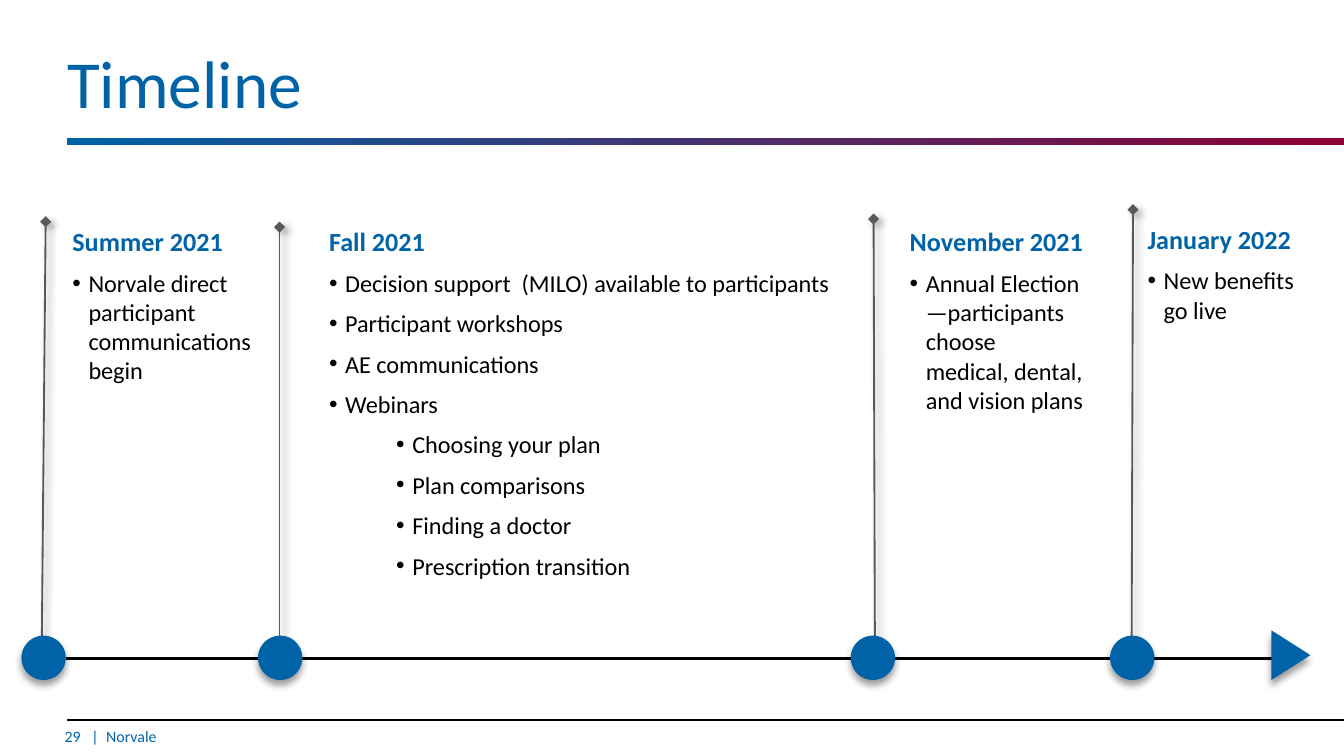
from dataclasses import dataclass

from lxml import etree
from pptx import Presentation
from pptx.dml.color import RGBColor
from pptx.enum.shapes import MSO_CONNECTOR, MSO_SHAPE
from pptx.enum.text import MSO_ANCHOR, MSO_AUTO_SIZE, PP_ALIGN
from pptx.oxml.ns import qn
from pptx.util import Inches, Pt

STRAIGHT = MSO_CONNECTOR.STRAIGHT
RECT, OVAL, TRIANGLE = MSO_SHAPE.RECTANGLE, MSO_SHAPE.OVAL, MSO_SHAPE.ISOSCELES_TRIANGLE
LEFT, MIDDLE, TOP = PP_ALIGN.LEFT, MSO_ANCHOR.MIDDLE, MSO_ANCHOR.TOP
GROW, NO_FIT = MSO_AUTO_SIZE.SHAPE_TO_FIT_TEXT, MSO_AUTO_SIZE.NONE


@dataclass(frozen=True)
class Theme:
    font: str = "Calibri"
    blue: RGBColor = RGBColor(0x00, 0x63, 0xA8)
    red: RGBColor = RGBColor(0x8D, 0x00, 0x34)
    grey: RGBColor = RGBColor(0x59, 0x59, 0x59)
    black: RGBColor = RGBColor(0, 0, 0)
    title: float = 36
    heading: float = 14
    body: float = 13
    footer: float = 8.5


THEME = Theme()
SLIDE_WIDTH = 10
SLIDE_HEIGHT = SLIDE_WIDTH * 9 / 16
AXIS_Y = 4.9
DOT = 0.33

# Stem (top x, top y, bottom x), dot left, text box (left, top, width, height),
# heading, bullets (level, text)
MILESTONES = [
    ((0.34, 1.65, 0.31), 0.16, (0.44, 1.63, 1.65, 1.3), "Summer 2021",
     [(0, "Norvale direct participant communications begin")]),
    ((2.08, 1.69, 2.08), 1.92, (2.35, 1.63, 4.24, 2.76), "Fall 2021",
     [(0, "Decision support  (MILO) available to participants"),
      (0, "Participant workshops"),
      (0, "AE communications"),
      (0, "Webinars"),
      (1, "Choosing your plan"),
      (1, "Plan comparisons"),
      (1, "Finding a doctor"),
      (1, "Prescription transition")]),
    ((6.5, 1.63, 6.51), 6.33, (6.67, 1.63, 1.49, 2.01), "November 2021",
     [(0, "Annual Election—participants choose medical, dental, and vision plans")]),
    ((8.43, 1.56, 8.42), 8.26, (8.44, 1.61, 1.65, 0.89), "January 2022",
     [(0, "New benefits\vgo live")]),
]


def set_effects(s, angle=None):
    """Leave the shape flat, or give it a soft shadow in the given direction."""
    sp_pr = s._element.spPr
    effects = sp_pr.find(qn("a:effectLst"))
    if effects is None:
        effects = etree.SubElement(sp_pr, qn("a:effectLst"))
    if angle is not None:
        shadow = etree.SubElement(effects, qn("a:outerShdw"), blurRad=str(Pt(4)),
                                  dist=str(Pt(3)), dir=str(angle * 60000), rotWithShape="0")
        color = etree.SubElement(shadow, qn("a:srgbClr"), val="000000")
        etree.SubElement(color, qn("a:alpha"), val="40000")


def add_line(slide, start, end, color, width, shadow=None, ends=None):
    s = slide.shapes.add_connector(STRAIGHT, *map(Inches, start + end))
    s.line.color.rgb = color
    s.line.width = Pt(width)
    if ends:
        ln = s.line._get_or_add_ln()
        for tag in ("a:headEnd", "a:tailEnd"):
            etree.SubElement(ln, qn(tag), type=ends)
    set_effects(s, shadow)


def add_solid(slide, kind, box, rotation=0):
    s = slide.shapes.add_shape(kind, *map(Inches, box))
    s.rotation = rotation
    s.fill.solid()
    s.fill.fore_color.rgb = THEME.blue
    s.line.fill.background()
    s.shadow.inherit = False
    set_effects(s, 90)


def write(p, text, size, color, bold=False):
    p.text = text
    p.alignment = LEFT
    for r in p.runs:
        for name, value in dict(name=THEME.font, size=Pt(size), bold=bold).items():
            setattr(r.font, name, value)
        r.font.color.rgb = color


def set_frame(tf, **values):
    for name, value in values.items():
        setattr(tf, name, value)


def set_bullet(p, level):
    p.level = level
    p_pr = p._p.get_or_add_pPr()
    p_pr.set("marL", str(Inches(0.12 + 0.5 * level)))
    p_pr.set("indent", str(Inches(-0.12)))
    etree.SubElement(p_pr, qn("a:buFont"), typeface="Arial")
    etree.SubElement(p_pr, qn("a:buChar"), char="•")


def add_notes_box(slide, box, heading, bullets):
    s = slide.shapes.add_textbox(*map(Inches, box))
    tf = s.text_frame
    set_frame(tf, word_wrap=True, auto_size=GROW, vertical_anchor=TOP)
    p = tf.paragraphs[0]
    write(p, heading, THEME.heading, THEME.blue, bold=True)
    p.space_after = Pt(6)
    for level, text in bullets:
        p = tf.add_paragraph()
        write(p, text, THEME.body, THEME.black)
        p.space_after = Pt(6)
        set_bullet(p, level)


def add_title(slide, text):
    s = slide.shapes.title
    s.left, s.top, s.width, s.height = map(Inches, (0.5, 0.26, 9, 0.7))
    set_frame(s.text_frame, margin_left=0, word_wrap=True, auto_size=NO_FIT,
              vertical_anchor=MIDDLE)
    write(s.text_frame.paragraphs[0], text, THEME.title, THEME.blue)


def add_title_bar(slide):
    s = slide.shapes.add_shape(RECT, *map(Inches, (0.5, 1.03, 9.5, 0.05)))
    s.fill.gradient()
    s.fill.gradient_angle = 0
    for stop, color in zip(s.fill.gradient_stops, (THEME.blue, THEME.red)):
        stop.color.rgb = color
    s.line.fill.background()
    s.shadow.inherit = False


def add_footer(slide, text):
    add_line(slide, (0.5, 5.36), (SLIDE_WIDTH, 5.36), THEME.black, 1)
    s = slide.shapes.add_textbox(*map(Inches, (0.48, 5.36, 2.58, 0.24)))
    set_frame(s.text_frame, margin_left=0, margin_right=0, word_wrap=True, auto_size=GROW)
    p = s.text_frame.paragraphs[0]
    write(p, text, THEME.footer, THEME.blue)
    tabs = etree.SubElement(p._p.get_or_add_pPr(), qn("a:tabLst"))
    for stop in (0.2, 0.31):
        etree.SubElement(tabs, qn("a:tab"), pos=str(Inches(stop)), algn="l")


def main():
    prs = Presentation()
    prs.slide_width, prs.slide_height = Inches(SLIDE_WIDTH), Inches(SLIDE_HEIGHT)
    slide = prs.slides.add_slide(prs.slide_layouts[5])

    # Title and footer
    add_title(slide, "Timeline")
    add_title_bar(slide)
    add_footer(slide, "29\t|\tNorvale")

    # Stems, then the axis with its arrowhead
    for (top_x, top_y, bottom_x), *_ in MILESTONES:
        add_line(slide, (top_x, top_y), (bottom_x, AXIS_Y), THEME.grey, 1,
                 shadow=45, ends="diamond")
    add_line(slide, (0.49, AXIS_Y), (9.59, AXIS_Y), THEME.black, 2)
    add_solid(slide, TRIANGLE, (9.42, 4.73, 0.37, 0.29), rotation=90)

    # Dots and milestone text
    for _, dot_left, box, heading, bullets in MILESTONES:
        add_solid(slide, OVAL, (dot_left, 4.73, DOT, DOT))
        add_notes_box(slide, box, heading, bullets)

    prs.save("out.pptx")


if __name__ == "__main__":
    main()
